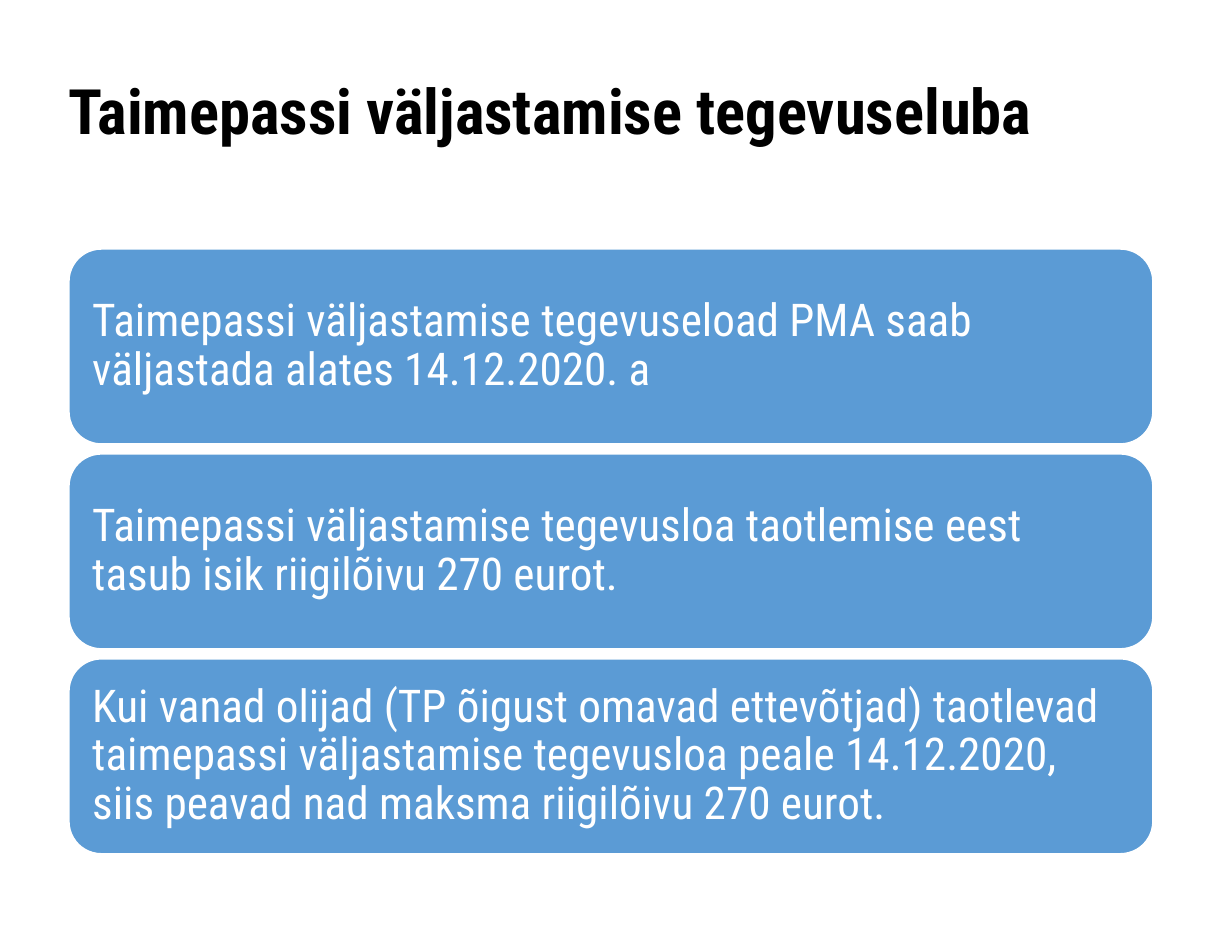
from dataclasses import dataclass

from pptx import Presentation
from pptx.dml.color import RGBColor
from pptx.enum.shapes import MSO_SHAPE
from pptx.enum.text import MSO_ANCHOR, PP_ALIGN
from pptx.util import Pt


@dataclass(frozen=True)
class Theme:
    """Colours, font and type sizes of the slide."""
    font: str = "Roboto Condensed"
    black: RGBColor = RGBColor(0x00, 0x00, 0x00)
    white: RGBColor = RGBColor(0xFF, 0xFF, 0xFF)
    blue: RGBColor = RGBColor(0x5B, 0x9B, 0xD5)
    title: int = 36
    body: int = 26


THEME = Theme()
LEFT, WIDTH = 39.6, 623.5
TOP, HEIGHT, STEP = 143.2, 112.3, 117.9

TITLE = "Taimepassi väljastamise tegevuseluba"
CARDS = (
    "Taimepassi väljastamise tegevuseload PMA saab väljastada alates 14.12.2020. a",
    "Taimepassi väljastamise tegevusloa taotlemise eest tasub isik riigilõivu 270 eurot.",
    "Kui vanad olijad (TP õigust omavad ettevõtjad) taotlevad taimepassi väljastamise "
    "tegevusloa peale 14.12.2020, siis peavad nad maksma riigilõivu 270 eurot.",
)


def write(shape, text, *, size, color, bold=False, space=0.9,
          anchor=MSO_ANCHOR.MIDDLE, inset=(8, 8, 8, 8)):
    """Write formatted text into a shape; inset is left, top, right, bottom."""
    frame = shape.text_frame
    frame.word_wrap = True
    frame.vertical_anchor = anchor
    (frame.margin_left, frame.margin_top,
     frame.margin_right, frame.margin_bottom) = map(Pt, inset)
    para = frame.paragraphs[0]
    para.alignment = PP_ALIGN.LEFT
    para.line_spacing = space
    run = para.add_run()
    run.text = text
    font = run.font
    font.name, font.size, font.bold = THEME.font, Pt(size), bold
    font.color.rgb = color


def add_title(slide, text):
    """Add the slide title."""
    box = slide.shapes.add_textbox(Pt(LEFT), Pt(42.5), Pt(WIDTH), Pt(85))
    write(box, text, size=THEME.title, color=THEME.black, bold=True,
          space=0.88, anchor=MSO_ANCHOR.TOP, inset=(0, 4.3, 0, 0))


def add_card(slide, top, text):
    """Add a rounded card with its text."""
    card = slide.shapes.add_shape(MSO_SHAPE.ROUNDED_RECTANGLE,
                                  Pt(LEFT), Pt(top), Pt(WIDTH), Pt(HEIGHT))
    card.shadow.inherit = False
    card.fill.solid()
    card.fill.fore_color.rgb = THEME.blue
    card.line.color.rgb = THEME.white
    card.line.width = Pt(1)
    write(card, text, size=THEME.body, color=THEME.white)


def main():
    """Build the slide and save it."""
    deck = Presentation()
    deck.slide_width, deck.slide_height = Pt(708.5), Pt(538.5)
    slide = deck.slides.add_slide(deck.slide_layouts[6])
    add_title(slide, TITLE)
    for row, text in enumerate(CARDS):
        add_card(slide, TOP + row * STEP, text)
    deck.save("out.pptx")


if __name__ == "__main__":
    main()
